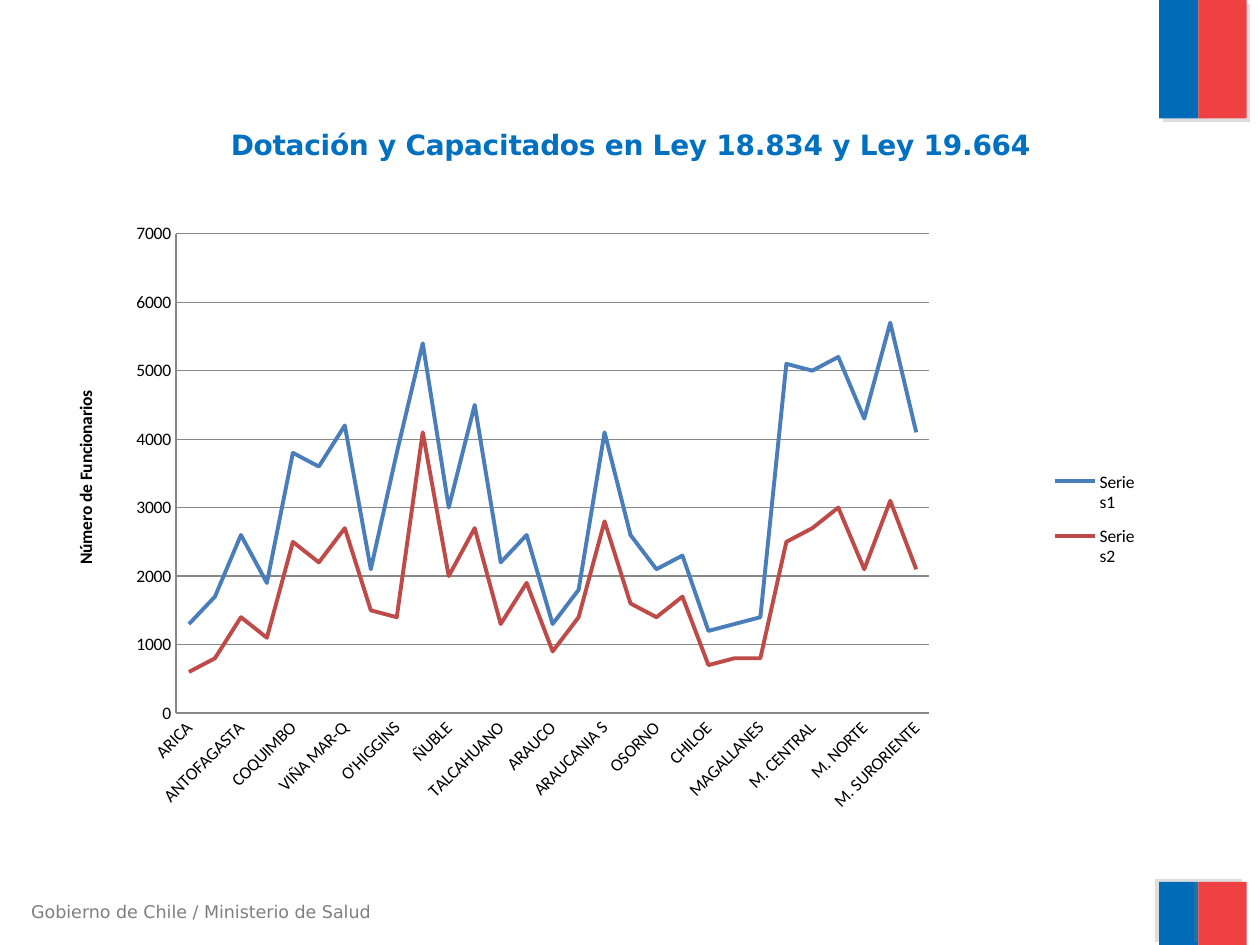
from pptx import Presentation
from pptx.chart.data import CategoryChartData
from pptx.dml.color import RGBColor
from pptx.enum.chart import XL_CHART_TYPE, XL_LEGEND_POSITION, XL_TICK_MARK
from pptx.enum.shapes import MSO_SHAPE
from pptx.oxml import parse_xml
from pptx.oxml.ns import nsdecls, qn
from pptx.util import Cm, Pt

LINE = XL_CHART_TYPE.LINE
RIGHT = XL_LEGEND_POSITION.RIGHT
NO_TICK = XL_TICK_MARK.NONE
RECT = MSO_SHAPE.RECTANGLE

NAMES = [
    "ARICA", "IQUIQUE", "ANTOFAGASTA", "ATACAMA", "COQUIMBO",
    "VALPARAÍSO-SA", "VIÑA MAR-Q", "ACONCAGUA", "O'HIGGINS", "MAULE",
    "ÑUBLE", "CONCEPCION", "TALCAHUANO", "BIO BIO", "ARAUCO",
    "ARAUCANIA N", "ARAUCANIA S", "VALDIVIA", "OSORNO", "DEL RELONCAVI",
    "CHILOE", "AYSÉN", "MAGALLANES", "M. ORIENTE", "M. CENTRAL", "M. SUR",
    "M. NORTE", "M. OCCIDENTE", "M. SURORIENTE",
]
STAFF = [
    1300, 1700, 2600, 1900, 3800, 3600, 4200, 2100, 3800, 5400,
    3000, 4500, 2200, 2600, 1300, 1800, 4100, 2600, 2100, 2300,
    1200, 1300, 1400, 5100, 5000, 5200, 4300, 5700, 4100,
]
TRAINED = [
    600, 800, 1400, 1100, 2500, 2200, 2700, 1500, 1400, 4100,
    2000, 2700, 1300, 1900, 900, 1400, 2800, 1600, 1400, 1700,
    700, 800, 800, 2500, 2700, 3000, 2100, 3100, 2100,
]
SERIES = [("Series1", STAFF, "4A7EBB"), ("Series2", TRAINED, "BE4B48")]


def color(code):
    return RGBColor.from_string(code)


def place(node, index, x, y, w=None, h=None):
    for old in node.findall(qn("c:layout")):
        node.remove(old)
    parts = '<c:xMode val="edge"/><c:yMode val="edge"/>'
    for tag, size in zip("xywh", (x, y, w, h)):
        if size is not None:
            parts += f'<c:{tag} val="{size}"/>'
    node.insert(index, parse_xml(
        f'<c:layout {nsdecls("c")}><c:manualLayout>{parts}'
        '</c:manualLayout></c:layout>'))


class Deck:
    sans = "DejaVu Sans"
    body = "Calibri"
    ink = "000000"
    gray = "878787"
    size = 10

    def __init__(self):
        self.show = Presentation()
        self.show.slide_width = Cm(25.4)
        self.show.slide_height = Cm(19.05)
        self.slide = self.show.slides.add_slide(self.show.slide_layouts[6])

    def style(self, font, name, size, code, bold=False):
        font.name = name
        font.size = Pt(size)
        font.bold = bold
        font.color.rgb = color(code)

    def block(self, x, y, w, h, code, angle):
        shape = self.slide.shapes.add_shape(RECT, Cm(x), Cm(y), Cm(w), Cm(h))
        shape.fill.solid()
        shape.fill.fore_color.rgb = color(code)
        shape.line.fill.background()
        shape.shadow.inherit = False
        glow = shape.element.spPr.find(qn("a:effectLst"))
        glow.append(parse_xml(
            f'<a:outerShdw {nsdecls("a")} dist="{Pt(3)}" '
            f'dir="{angle * 60000}" rotWithShape="0"><a:srgbClr val="808080">'
            '<a:alpha val="25000"/></a:srgbClr></a:outerShdw>'))

    def flag(self, y, h, angle):
        self.block(23.37, y, 0.79, h, "006CB7", angle)
        self.block(24.16, y, 0.97, h, "EF4144", angle)

    def text(self, words, x, y, w, h, code):
        frame = self.slide.shapes.add_textbox(
            Cm(x), Cm(y), Cm(w), Cm(h)).text_frame
        frame.word_wrap = True
        frame.text = words
        self.style(frame.paragraphs[0].runs[0].font, self.sans, self.size, code)

    def title(self, owner, words, name, size, code, x, y):
        head = owner.text_frame
        head.text = words
        self.style(head.paragraphs[0].runs[0].font, name, size, code, True)
        place(owner._element, 1, x, y)

    def axis(self, axis):
        axis.major_tick_mark = axis.minor_tick_mark = NO_TICK
        self.style(axis.tick_labels.font, self.body, self.size, self.ink)
        self.edge(axis.format.line)

    def edge(self, line, code=gray, width=0.75):
        line.color.rgb = color(code)
        line.width = Pt(width)

    def chart(self, x, y, w, h):
        data = CategoryChartData()
        data.categories = NAMES
        for name, values, _ in SERIES:
            data.add_series(name, values)
        chart = self.slide.shapes.add_chart(
            LINE, Cm(x), Cm(y), Cm(w), Cm(h), data).chart
        self.style(chart.font, self.body, self.size, self.ink)
        self.title(chart.chart_title,
                   "Dotación y Capacitados en Ley 18.834 y Ley 19.664",
                   self.sans, 16, "0070C0", 0.16, 0.07)

        plot = chart.plots[0]
        plot.vary_by_categories = False
        for series, (_, _, code) in zip(plot.series, SERIES):
            series.smooth = False
            self.edge(series.format.line, code, 2.25)
        area = chart._chartSpace.chart.plotArea
        place(area, 0, 0.085, 0.185, 0.666, 0.665)

        cats, vals = chart.category_axis, chart.value_axis
        self.axis(cats)
        self.axis(vals)
        turn = cats._element.find(qn("c:txPr")).find(qn("a:bodyPr"))
        turn.set("rot", "-2700000")
        turn.set("vert", "horz")
        vals.minimum_scale, vals.maximum_scale = 0, 7000
        vals.major_unit = 1000
        self.edge(vals.major_gridlines.format.line)
        self.title(vals.axis_title, "Número de Funcionarios",
                   self.body, self.size, self.ink, 0.03, 0.37)

        chart.has_legend = True
        legend = chart.legend
        legend.position = RIGHT
        legend.include_in_layout = False
        self.style(legend.font, self.body, self.size, self.ink)
        place(legend._element, 1, 0.855, 0.45, 0.07, 0.14)


def main():
    deck = Deck()
    deck.flag(0, 2.39, 45)
    deck.flag(17.78, 1.27, 215)
    deck.text("Gobierno de Chile / Ministerio de Salud",
              0.38, 18.03, 7.67, 0.69, "7F7F7F")
    deck.chart(0.71, 1.22, 24, 17.8)
    deck.show.save("out.pptx")


if __name__ == "__main__":
    main()
